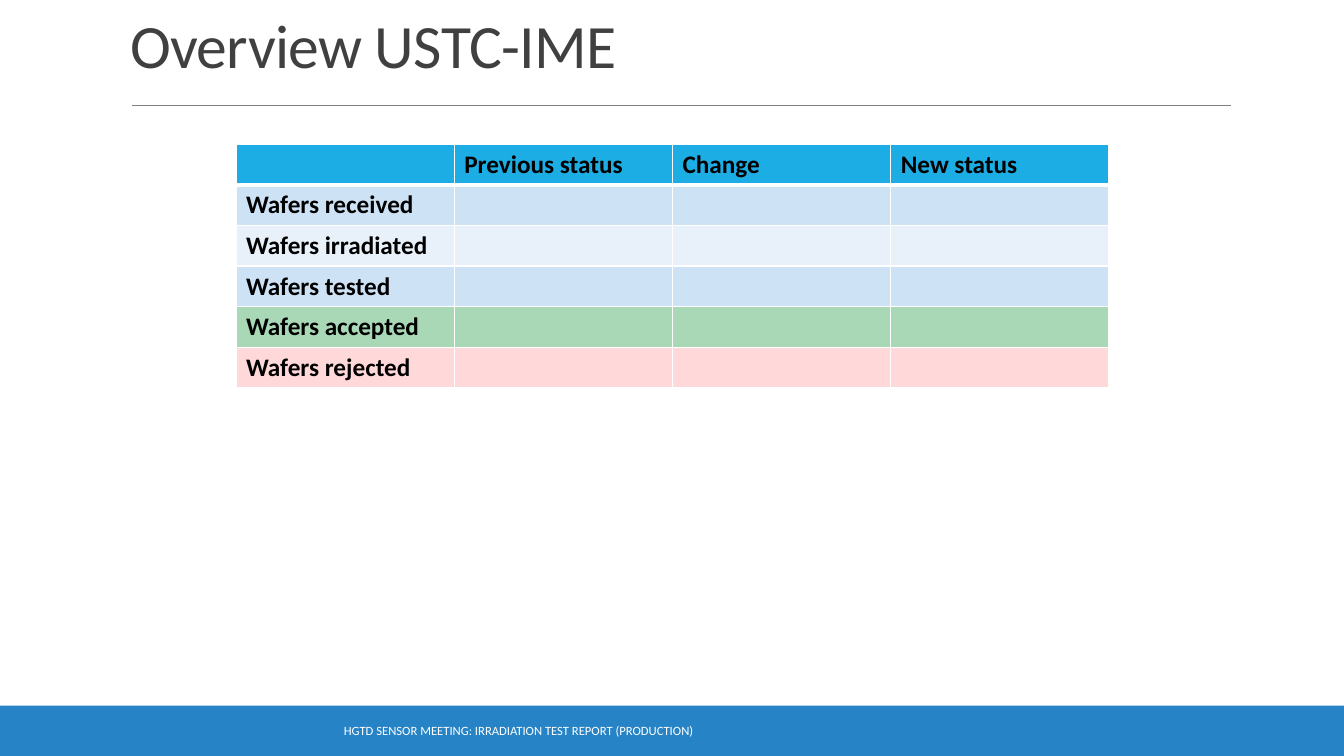
from lxml import etree
from pptx import Presentation
from pptx.dml.color import RGBColor
from pptx.enum.shapes import MSO_CONNECTOR, MSO_SHAPE
from pptx.enum.text import MSO_ANCHOR, MSO_AUTO_SIZE, PP_ALIGN
from pptx.oxml.ns import qn
from pptx.util import Inches, Pt

LEFT, CENTER = PP_ALIGN.LEFT, PP_ALIGN.CENTER
MIDDLE, BOTTOM = MSO_ANCHOR.MIDDLE, MSO_ANCHOR.BOTTOM
RECTANGLE, STRAIGHT = MSO_SHAPE.RECTANGLE, MSO_CONNECTOR.STRAIGHT
NO_AUTOFIT = MSO_AUTO_SIZE.NONE

WIDTH, HEIGHT = 13.33, 7.5
FONT = "Calibri"
HEADER_FILL = "1CADE4"
HEADINGS = ["", "Previous status", "Change", "New status"]
WAFER_ROWS = [
    ("Wafers received", "CDE3F5"),
    ("Wafers irradiated", "E8F1FA"),
    ("Wafers tested", "CDE3F5"),
    ("Wafers accepted", "A9D8B7"),
    ("Wafers rejected", "FFD9D9"),
]


def color(hex_value):
    return RGBColor.from_string(hex_value)


def write(frame, text, size=18, fill="000000", bold=False, align=LEFT,
          line_spacing=None, tracking=None):
    para = frame.paragraphs[0]
    para.alignment = align
    if line_spacing:
        para.line_spacing = line_spacing
    span = para.add_run()
    span.text = text
    span.font.name, span.font.size, span.font.bold = FONT, Pt(size), bold
    span.font.color.rgb = color(fill)
    if tracking is not None:
        span._r.get_or_add_rPr().set("spc", str(round(tracking * 100)))


def add_title(page, left, top, width, height):
    title = page.shapes.title
    title.left, title.top = Inches(left), Inches(top)
    title.width, title.height = Inches(width), Inches(height)
    frame = title.text_frame
    frame.auto_size, frame.word_wrap = NO_AUTOFIT, True
    frame.vertical_anchor = BOTTOM
    write(frame, "Overview USTC-IME", size=44, fill="404040",
          line_spacing=0.85, tracking=-0.5)

    # Rule under the title
    rule_y = Inches(top + height + 0.2)
    rule = page.shapes.add_connector(
        STRAIGHT, Inches(left + 0.12), rule_y, Inches(left + width + 0.02), rule_y)
    rule.line.color.rgb = color("808080")
    rule.line.width = Pt(0.5)
    etree.SubElement(rule._element.spPr, qn("a:effectLst"))


def add_footer(page, left, top, width, height):
    band = page.shapes.add_shape(
        RECTANGLE, Inches(left), Inches(top), Inches(width), Inches(height))
    band.shadow.inherit = False
    band.fill.solid()
    band.fill.fore_color.rgb = color("2683C6")
    band.line.fill.background()

    # Meeting name
    box = page.shapes.add_textbox(
        Inches(left + 1.21), Inches(top + 0.05), Inches(width * 0.59), Inches(height - 0.1))
    box.text_frame.word_wrap = True
    box.text_frame.vertical_anchor = MIDDLE
    write(box.text_frame, "HGTD SENSOR MEETING: IRRADIATION TEST REPORT (PRODUCTION)",
          size=9, fill="FFFFFF", align=CENTER)


def set_borders(cell, top=1, bottom=1):
    properties = cell._tc.get_or_add_tcPr()
    for side, points in (("L", 1), ("R", 1), ("T", top), ("B", bottom)):
        border = etree.SubElement(properties, qn(f"a:ln{side}"), w=str(Pt(points)))
        solid = etree.SubElement(border, qn("a:solidFill"))
        etree.SubElement(solid, qn("a:srgbClr"), val="FFFFFF")


def add_status_table(page, left, top, width, height):
    rows = [(HEADINGS, HEADER_FILL)]
    rows += [([label, "", "", ""], fill) for label, fill in WAFER_ROWS]
    table = page.shapes.add_table(
        len(rows), len(HEADINGS), Inches(left), Inches(top),
        Inches(width), Inches(height)).table
    for row_index, (texts, fill) in enumerate(rows):
        for column_index, text in enumerate(texts):
            cell = table.cell(row_index, column_index)
            set_borders(cell, top=3 if row_index == 1 else 1,
                        bottom=3 if row_index == 0 else 1)
            cell.fill.solid()
            cell.fill.fore_color.rgb = color(fill)
            if text:
                write(cell.text_frame, text, bold=True)


def main():
    deck = Presentation()
    deck.slide_width, deck.slide_height = Inches(WIDTH), Inches(HEIGHT)
    page = deck.slides.add_slide(deck.slide_layouts.get_by_name("Title Only"))
    add_footer(page, 0, HEIGHT - 0.5, WIDTH, 0.5)
    add_title(page, 1.19, -0.74, 11, 1.59)
    add_status_table(page, 2.34, 1.43, 8.66, 2.42)
    deck.save("out.pptx")


if __name__ == "__main__":
    main()
